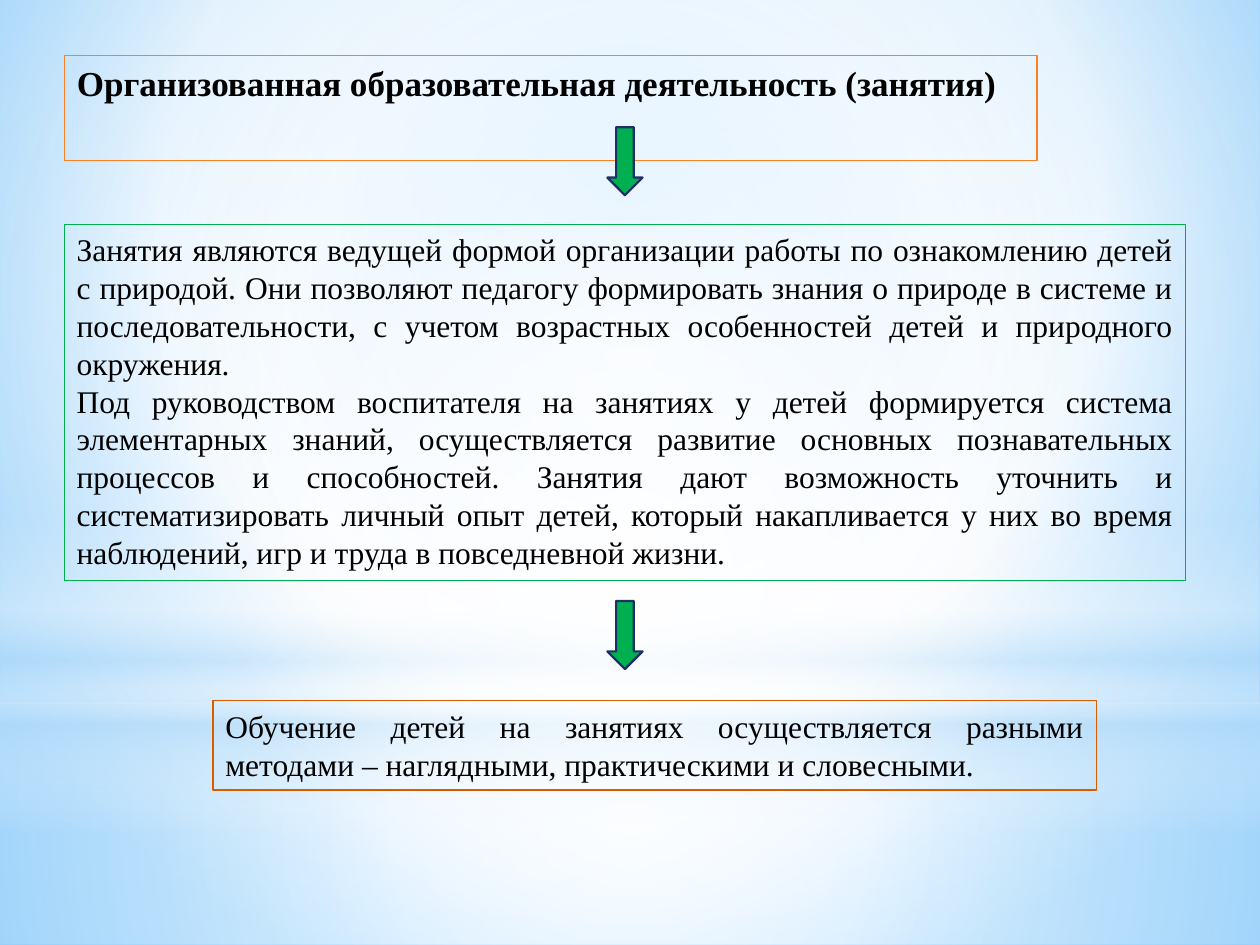
from lxml.etree import SubElement
from pptx import Presentation
from pptx.dml.color import RGBColor
from pptx.enum.shapes import MSO_SHAPE
from pptx.enum.text import MSO_ANCHOR, MSO_AUTO_SIZE, PP_ALIGN
from pptx.oxml.ns import qn
from pptx.util import Inches, Pt

FONT = "Times New Roman"
BLACK = RGBColor(0x00, 0x00, 0x00)
WHITE = RGBColor(0xFF, 0xFF, 0xFF)
SKY = RGBColor(0x9E, 0xD5, 0xFF)
DEEP_SKY = RGBColor(0x5B, 0xB9, 0xFF)
PALE_BLUE = RGBColor(0xB4, 0xDC, 0xFA)
ORANGE = RGBColor(0xFF, 0x80, 0x21)
DARK_ORANGE = RGBColor(0xD8, 0x5C, 0x00)
GREEN = RGBColor(0x00, 0xB0, 0x50)
NAVY = RGBColor(0x1F, 0x2E, 0x69)

LEFT = 0.51
BODY_WIDTH = 8.9
ARROW_WIDTH, ARROW_HEIGHT = 0.28, 0.54
ARROW_LEFT = LEFT + (BODY_WIDTH - ARROW_WIDTH) / 2
CENTRE = (50, 50, 50, 50)

HEADING = "Организованная образовательная деятельность (занятия)"
ROLE_OF_LESSONS = [
    "Занятия являются ведущей формой организации работы по ознакомлению "
    "детей с природой. Они позволяют педагогу формировать знания о природе "
    "в системе и последовательности, с учетом возрастных особенностей детей "
    "и природного окружения.",
    "Под руководством воспитателя на занятиях у детей формируется система "
    "элементарных знаний, осуществляется развитие основных познавательных "
    "процессов и способностей. Занятия дают возможность уточнить и "
    "систематизировать личный опыт детей, который накапливается у них во "
    "время наблюдений, игр и труда в повседневной жизни.",
]
METHODS = [
    "Обучение детей на занятиях осуществляется разными методами – "
    "наглядными, практическими и словесными.",
]

# Backdrop layers: shape, box, stops (position, colour, opacity), focus
BACKDROP = [
    (MSO_SHAPE.RECTANGLE, (0, 5.58, 10, 1.92),
     [(0, WHITE, 91), (37, WHITE, 76), (100, PALE_BLUE, 79)], CENTRE),
    (MSO_SHAPE.RECTANGLE, (0, 0, 10, 5.58),
     [(0, WHITE, 89), (48, WHITE, 62), (100, PALE_BLUE, 79)], CENTRE),
    (MSO_SHAPE.RECTANGLE, (0, 4.12, 10, 2.5),
     [(0, WHITE, 0), (29, WHITE, 30), (45, PALE_BLUE, 40),
      (55, WHITE, 26), (65, PALE_BLUE, 60), (100, WHITE, 0)], None),
    (MSO_SHAPE.OVAL, (0, 1.75, 10, 5.58),
     [(0, WHITE, 100), (56, WHITE, 0)], CENTRE),
]


def inches(box):
    return [Inches(length) for length in box]


def set_gradient(properties, stops, focus):
    """Turn a solid fill into a circular gradient, or a vertical one without focus."""
    solid = properties.find(qn("a:solidFill"))
    gradient = properties.makeelement(qn("a:gradFill"), {"rotWithShape": "1"})
    stop_list = SubElement(gradient, qn("a:gsLst"))
    for position, colour, opacity in stops:
        stop = SubElement(stop_list, qn("a:gs"), pos=str(position * 1000))
        tint = SubElement(stop, qn("a:srgbClr"), val=str(colour))
        if opacity < 100:
            SubElement(tint, qn("a:alpha"), val=str(opacity * 1000))
    if focus:
        circle = SubElement(gradient, qn("a:path"), {"path": "circle"})
        sides = {side: str(share * 1000) for side, share in zip("ltrb", focus)}
        SubElement(circle, qn("a:fillToRect"), sides)
    else:
        SubElement(gradient, qn("a:lin"), ang="5400000", scaled="0")
    properties.replace(solid, gradient)


def add_backdrop(slide):
    slide.background.fill.solid()
    set_gradient(slide.element.find(".//" + qn("p:bgPr")),
                 [(0, SKY, 100), (60, WHITE, 100), (100, DEEP_SKY, 100)],
                 (20, 10, 20, 60))
    # The layers belong to the layout, behind its placeholders
    layout_tree = slide.slide_layout.shapes.element
    for index, (kind, box, stops, focus) in enumerate(BACKDROP):
        layer = slide.shapes.add_shape(kind, *inches(box))
        layer.shadow.inherit = False
        layer.line.fill.background()
        layer.fill.solid()
        set_gradient(layer.element.spPr, stops, focus)
        layer.element.nvSpPr.cNvPr.set("id", str(100 + index))
        layout_tree.insert(2 + index, layer.element)


def fill_frame(frame, box, paragraphs, outline, size, align, bold=False):
    frame.left, frame.top, frame.width, frame.height = inches(box)
    frame.line.color.rgb = outline
    frame.line.width = Pt(0.75)
    text = frame.text_frame
    text.word_wrap = True
    text.auto_size = MSO_AUTO_SIZE.SHAPE_TO_FIT_TEXT
    text.vertical_anchor = MSO_ANCHOR.TOP
    for index, wording in enumerate(paragraphs):
        paragraph = text.add_paragraph() if index else text.paragraphs[0]
        paragraph.alignment = align
        run = paragraph.add_run()
        run.text = wording
        run.font.name = FONT
        run.font.size = Pt(size)
        run.font.bold = bold
        run.font.color.rgb = BLACK


def add_heading(slide, box):
    fill_frame(slide.shapes.title, box, [HEADING], ORANGE, 20, PP_ALIGN.LEFT, True)


def add_passage(slide, box, paragraphs, outline):
    passage = slide.shapes.add_textbox(*inches(box))
    fill_frame(passage, box, paragraphs, outline, 18, PP_ALIGN.JUSTIFY)


def add_down_arrow(slide, box):
    arrow = slide.shapes.add_shape(MSO_SHAPE.DOWN_ARROW, *inches(box))
    arrow.shadow.inherit = False
    arrow.fill.solid()
    arrow.fill.fore_color.rgb = GREEN
    arrow.line.color.rgb = NAVY
    arrow.line.width = Pt(1.25)


def main():
    deck = Presentation()
    deck.slide_width, deck.slide_height = Inches(10), Inches(7.5)
    slide = deck.slides.add_slide(deck.slide_layouts[5])
    add_backdrop(slide)
    add_heading(slide, (LEFT, 0.44, 7.72, 0.44))
    add_passage(slide, (LEFT, 1.78, BODY_WIDTH, 2.83), ROLE_OF_LESSONS, GREEN)
    for top in (1.01, 4.77):
        add_down_arrow(slide, (ARROW_LEFT, top, ARROW_WIDTH, ARROW_HEIGHT))
    add_passage(slide, (1.69, 5.56, 7.01, 0.71), METHODS, DARK_ORANGE)
    deck.save("out.pptx")


if __name__ == "__main__":
    main()
